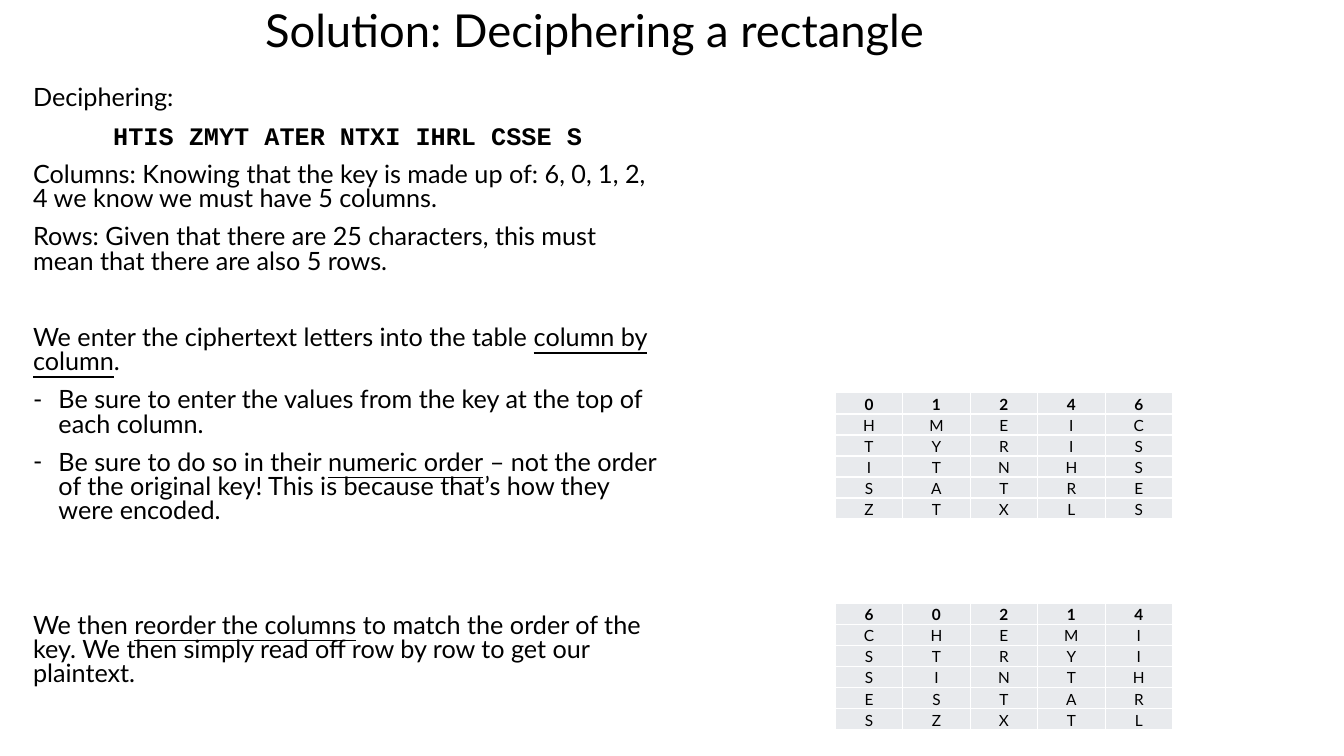
from dataclasses import dataclass

from lxml.etree import SubElement
from pptx import Presentation
from pptx.dml.color import RGBColor
from pptx.enum.text import MSO_ANCHOR, MSO_AUTO_SIZE, PP_ALIGN
from pptx.oxml import parse_xml
from pptx.oxml.ns import nsdecls, qn
from pptx.util import Cm, Pt


@dataclass(frozen=True)
class Theme:
    ink: RGBColor = RGBColor(0, 0, 0)
    cell_fill: RGBColor = RGBColor(0xE8, 0xEA, 0xED)
    border: str = "FFFFFF"
    font: str = "Lato"
    code_font: str = "Courier New"
    title_size: float = 32.4
    body_size: float = 18
    cell_size: float = 11
    para_gap: float = 10
    section_gap: float = 37.3
    final_gap: float = 64.6


@dataclass(frozen=True)
class Box:
    left: float
    top: float
    width: float
    height: float

    def place(self, shape):
        shape.left, shape.top = Cm(self.left), Cm(self.top)
        shape.width, shape.height = Cm(self.width), Cm(self.height)


@dataclass(frozen=True)
class Line:
    spans: tuple
    gap: float = Theme.para_gap
    bullet: bool = False
    code: bool = False


THEME = Theme()
CIPHERTEXT = "HTIS ZMYT ATER NTXI IHRL CSSE S"
SORTED_KEY = "01246"
REORDERED_KEY = "60214"
LETTERS = CIPHERTEXT.replace(" ", "")
ROWS = len(LETTERS) // len(SORTED_KEY)
COLUMNS = {
    digit: LETTERS[index * ROWS:(index + 1) * ROWS]
    for index, digit in enumerate(SORTED_KEY)
}
LINES = [
    Line(("Deciphering:",)),
    Line((CIPHERTEXT,), code=True),
    Line(("Columns: Knowing that the key is made up of: 6, 0, 1, 2, 4 "
          "we know we must have 5 columns.",)),
    Line(("Rows: Given that there are 25 characters, this must mean "
          "that there are also 5 rows.",)),
    Line(("We enter the ciphertext letters into the table ",
          "column by column", "."), gap=THEME.section_gap),
    Line(("Be sure to enter the values from the key at the top of each "
          "column.",), bullet=True),
    Line(("Be sure to do so in their ", "numeric order",
          " – not the order of the original key! This is because that’s "
          "how they were encoded."), bullet=True),
    Line(("We then ", "reorder the columns",
          " to match the order of the key. We then simply read off row by "
          "row to get our plaintext."), gap=THEME.final_gap),
]


def style_span(span, size, font=THEME.font, bold=False, underline=False):
    span.font.name = font
    span.font.size = Pt(size)
    span.font.color.rgb = THEME.ink
    span.font.bold = bold
    span.font.underline = underline


def set_bullet(para, bullet):
    properties = para._p.get_or_add_pPr()
    indent = Cm(0.64) if bullet else 0
    properties.set("marL", str(indent))
    properties.set("indent", str(-indent))
    if bullet:
        SubElement(properties, qn("a:buFont"), typeface=THEME.font)
        SubElement(properties, qn("a:buChar"), char="-")
    else:
        SubElement(properties, qn("a:buNone"))


def add_title(page, box):
    title = page.shapes.title
    box.place(title)
    frame = title.text_frame
    frame.text = "Solution: Deciphering a rectangle"
    frame.auto_size = MSO_AUTO_SIZE.NONE
    frame.vertical_anchor = MSO_ANCHOR.MIDDLE
    para = frame.paragraphs[0]
    para.alignment = PP_ALIGN.CENTER
    para.line_spacing = 0.9
    style_span(para.runs[0], THEME.title_size)


def add_explanation(page, box):
    body = page.placeholders[1]
    box.place(body)
    frame = body.text_frame
    frame.text = "\n".join(line.spans[0] for line in LINES)
    frame.auto_size = MSO_AUTO_SIZE.NONE
    frame.vertical_anchor = MSO_ANCHOR.TOP
    for para, line in zip(frame.paragraphs, LINES):
        para.alignment = PP_ALIGN.CENTER if line.code else PP_ALIGN.LEFT
        para.line_spacing = 0.8
        para.space_before = Pt(line.gap)
        set_bullet(para, line.bullet)
        for text in line.spans[1:]:
            para.add_run().text = text
        font = THEME.code_font if line.code else THEME.font
        for index, span in enumerate(para.runs):
            style_span(span, THEME.body_size, font, line.code, index == 1)


def style_cell(cell, bold):
    cell.margin_left = cell.margin_right = cell.margin_top = Cm(0.03)
    cell.margin_bottom = 0
    cell.vertical_anchor = MSO_ANCHOR.BOTTOM
    cell.fill.solid()
    cell.fill.fore_color.rgb = THEME.cell_fill
    properties = cell._tc.get_or_add_tcPr()
    for index, side in enumerate("LRTB"):
        properties.insert(index, parse_xml(
            f'<a:ln{side} {nsdecls("a")} w="{Pt(1)}"><a:solidFill>'
            f'<a:srgbClr val="{THEME.border}"/></a:solidFill></a:ln{side}>'))
    para = cell.text_frame.paragraphs[0]
    para.alignment = PP_ALIGN.CENTER
    style_span(para.runs[0], THEME.cell_size, bold=bold)


def add_cipher_table(page, box, key):
    frame = page.shapes.add_table(
        ROWS + 1, len(key), Cm(box.left), Cm(box.top),
        Cm(box.width), Cm(box.height))
    table = frame.table
    table.first_row = False
    table.horz_banding = False
    for row in table.rows:
        row.height = Cm(box.height / (ROWS + 1))
    for column_index, digit in enumerate(key):
        table.columns[column_index].width = Cm(box.width / len(key))
        for row_index, letter in enumerate(digit + COLUMNS[digit]):
            cell = table.cell(row_index, column_index)
            cell.text = letter
            style_cell(cell, row_index == 0)


def main():
    deck = Presentation()
    deck.slide_width, deck.slide_height = Cm(33.87), Cm(19.05)
    page = deck.slides.add_slide(deck.slide_layouts[1])
    add_explanation(page, Box(0.58, 2.08, 16.36, 16.2))
    add_title(page, Box(0.38, 0, 29.21, 1.63))
    for top, key in ((9.9, SORTED_KEY), (15.2, REORDERED_KEY)):
        add_cipher_table(page, Box(21.05, top, 8.5, 3.18), key)
    deck.save("out.pptx")


if __name__ == "__main__":
    main()
